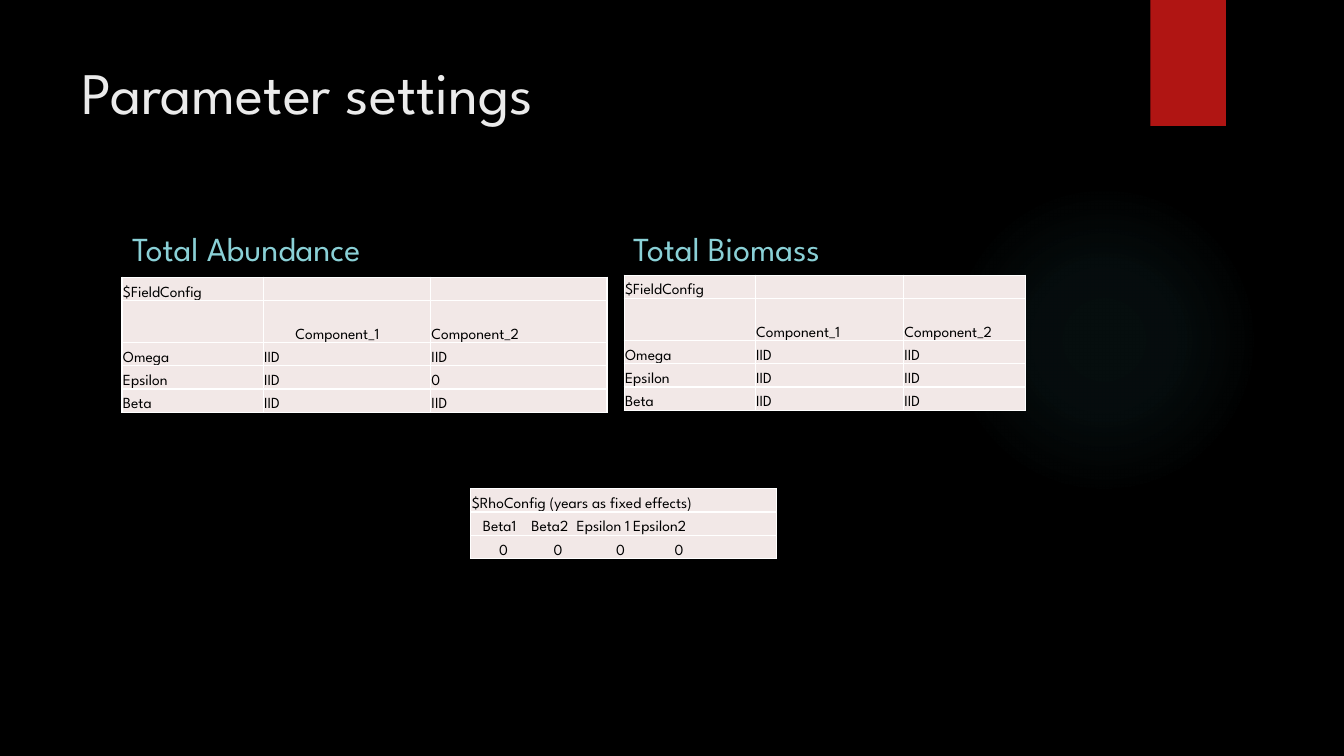
"""Build the slide that lists the parameter settings."""
from lxml.etree import SubElement
from pptx import Presentation
from pptx.dml.color import RGBColor
from pptx.enum.shapes import MSO_SHAPE
from pptx.enum.text import MSO_ANCHOR, PP_ALIGN
from pptx.oxml import parse_xml
from pptx.oxml.ns import nsdecls, qn
from pptx.util import Inches, Pt

BLACK = RGBColor(0x00, 0x00, 0x00)
RED = RGBColor(0xB0, 0x15, 0x13)
PALE = RGBColor(0xEB, 0xEB, 0xEB)
AQUA = RGBColor(0x8A, 0xD0, 0xD6)
TEAL = RGBColor(0x50, 0xB9, 0xC1)
ROSE = RGBColor(0xF2, 0xE8, 0xE7)
WHITE = RGBColor(0xFF, 0xFF, 0xFF)
FACE = "League Spartan"


def write(frame, text, size=11, color=BLACK, anchor=MSO_ANCHOR.BOTTOM, indent=0, tabs=()):
    frame.word_wrap = True
    frame.vertical_anchor = anchor
    para = frame.paragraphs[0]
    props = para._p.get_or_add_pPr()
    if indent:
        props.set("marL", str(Inches(indent)))
    if tabs:
        stops = SubElement(props, qn("a:tabLst"))
        for tab in tabs:
            SubElement(stops, qn("a:tab"), pos=str(Inches(tab)), algn="l")
    para.alignment = PP_ALIGN.LEFT
    para.space_before = Pt(0)
    if not text:
        SubElement(para._p, qn("a:endParaRPr"), sz=str(size * 100))
        return
    run = para.add_run()
    run.text = text
    font = run.font
    font.name, font.size, font.bold = FACE, Pt(size), False
    font.color.rgb = color


def grid(left, top, widths, heights, rows, indents={}, stops={}):
    frame = slide.shapes.add_table(len(rows), len(widths), Inches(left), Inches(top),
                                   Inches(sum(widths)), Inches(sum(heights)))
    table = frame.table
    table.first_row = table.horz_banding = False
    for col, width in zip(table.columns, widths):
        col.width = Inches(width)
    for r, (row, height) in enumerate(zip(rows, heights)):
        table.rows[r].height = Inches(height)
        for c, text in enumerate(row):
            cell = table.cell(r, c)
            cell.margin_left = cell.margin_right = cell.margin_top = Inches(0.01)
            cell.margin_bottom = 0
            write(cell.text_frame, text, indent=indents.get((r, c), 0), tabs=stops.get(r, ()))
            cell.vertical_anchor = MSO_ANCHOR.BOTTOM
            cell.fill.solid()
            cell.fill.fore_color.rgb = ROSE
            for n, side in enumerate("LRTB"):
                cell._tc.tcPr.insert(n, parse_xml(
                    f'<a:ln{side} {nsdecls("a")} w="{Pt(1)}"><a:solidFill>'
                    f'<a:srgbClr val="{WHITE}"/></a:solidFill></a:ln{side}>'))


deck = Presentation()
deck.slide_width, deck.slide_height = Inches(13.33), Inches(7.5)
slide = deck.slides.add_slide(deck.slide_layouts[4])
slide.background.fill.solid()
slide.background.fill.fore_color.rgb = BLACK
holders = {item.placeholder_format.idx: item for item in slide.placeholders}
for idx in (2, 4):
    holders[idx]._element.getparent().remove(holders[idx]._element)

glow = slide.shapes.add_shape(MSO_SHAPE.OVAL, Inches(9.41), Inches(1.83), Inches(3.08), Inches(3.08))
flag = slide.shapes.add_shape(MSO_SHAPE.RECTANGLE, Inches(11.41), 0, Inches(0.75), Inches(1.25))
for n, shape in enumerate((glow, flag)):
    shape.shadow.inherit = False
    shape.line.fill.background()
    shape.fill.solid()
    shape.fill.fore_color.rgb = RED
    slide.shapes._spTree.insert(2 + n, shape._element)
marks = "".join(
    f'<a:gs pos="{pos}000"><a:srgbClr val="{TEAL}"><a:alpha val="{alpha}000"/></a:srgbClr></a:gs>'
    for pos, alpha in ((0, 7), (36, 6), (69, 0), (100, 0)))
solid = glow._element.spPr.find(qn("a:solidFill"))
solid.getparent().replace(solid, parse_xml(
    f'<a:gradFill {nsdecls("a")}><a:gsLst>{marks}</a:gsLst><a:path path="circle">'
    '<a:fillToRect l="50000" t="50000" r="50000" b="50000"/></a:path></a:gradFill>'))

for idx, text, left, top, width, height, size, color, anchor in (
        (0, "Parameter settings", 0.71, 0.5, 10.29, 1.53, 42, PALE, MSO_ANCHOR.TOP),
        (1, "Total Abundance", 1.21, 2.08, 4.81, 0.63, 24, AQUA, MSO_ANCHOR.BOTTOM),
        (3, "Total Biomass", 6.18, 2.08, 4.81, 0.63, 24, AQUA, MSO_ANCHOR.BOTTOM)):
    item = holders[idx]
    item.left, item.top = Inches(left), Inches(top)
    item.width, item.height = Inches(width), Inches(height)
    write(item.text_frame, text, size=size, color=color, anchor=anchor)

head = [("$FieldConfig", "", ""), ("", "Component_1", "Component_2")]
omega, beta = ("Omega", "IID", "IID"), ("Beta", "IID", "IID")
tall = [0.23, 0.42, 0.23, 0.23, 0.23]
grid(1.21, 2.75, [1.4, 1.66, 1.75], tall,
     head + [omega, ("Epsilon", "IID", "0"), beta], indents={(1, 1): 0.31})
grid(6.19, 2.73, [1.3, 1.47, 1.21], tall,
     head + [omega, ("Epsilon", "IID", "IID"), beta])
grid(4.67, 4.85, [3.03], [0.23] * 3,
     [("$RhoConfig (years as fixed effects)",),
      ("\tBeta1\tBeta2\tEpsilon 1\tEpsilon2",),
      ("\t0\t0\t0\t0",)],
     stops={1: (0.11, 0.59, 1.04, 1.6), 2: (0.27, 0.81, 1.43, 2.01)})

deck.save("out.pptx")
